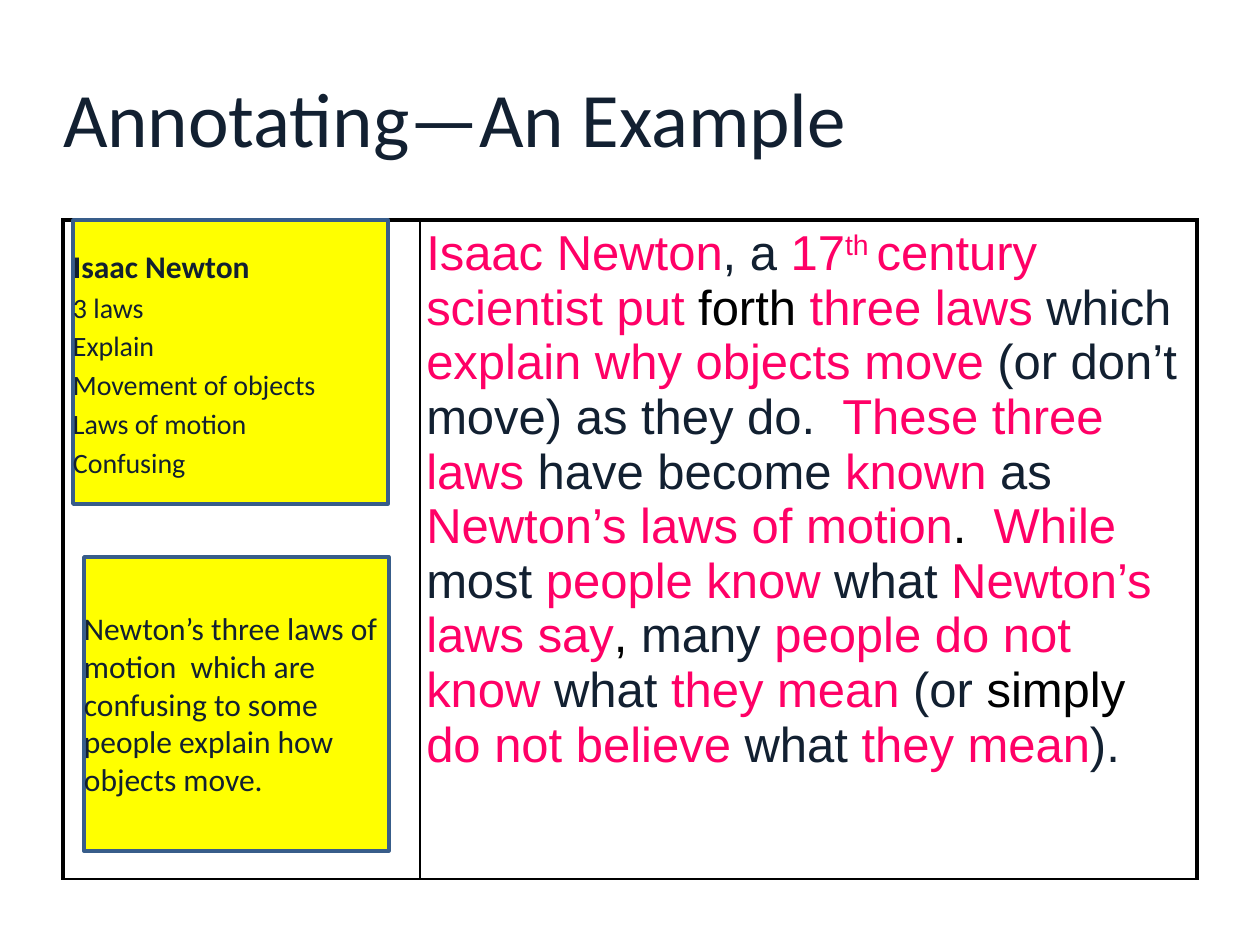
from lxml import etree
from pptx import Presentation, util as u
from pptx.dml.color import RGBColor
from pptx.enum import shapes, text
from pptx.oxml import ns

PX = 914400 // 126
PINK, NAVY, BLACK = "FF0066", "122031", "000000"

TITLE = "Annotating—An Example"
BODY = [
    (PINK, "Isaac Newton"), (NAVY, ", a "), (PINK, "17"), (PINK, "th "),
    (PINK, "century scientist put"), (BLACK, " forth "),
    (PINK, "three laws "), (NAVY, "which "),
    (PINK, "explain why objects move"),
    (NAVY, " (or don’t move) as they do.  "),
    (PINK, "These three laws "), (NAVY, "have become "),
    (PINK, "known "), (NAVY, "as "),
    (PINK, "Newton’s laws of motion"), (BLACK, ".  "),
    (PINK, "While "), (NAVY, "most "), (PINK, "people know "),
    (NAVY, "what "), (PINK, "Newton’s laws say"), (BLACK, ", "),
    (NAVY, "many "), (PINK, "people do not know "), (NAVY, "what "),
    (PINK, "they mean "), (NAVY, "(or "), (BLACK, "simply "),
    (PINK, "do not believe "), (NAVY, "what "), (PINK, "they mean"),
    (NAVY, ")."),
]
COLS, ROWS = (357, 777), (659, 72)
EDGES = {
    (0, 0): {"L": 2.25, "T": 2.25, "R": 1, "B": 1},
    (0, 1): {"L": 1, "T": 2.25, "R": 2.25, "B": 1},
    (1, 0): {"T": 1, "B": 2.25},
    (1, 1): {"T": 1, "B": 2.25},
}
NOTES = [
    ((73, 220, 315, 284), (73, 238, 315, 250), [
        ("Isaac Newton", 18, True, 4), ("3 laws", 16, False, 3),
        ("Explain", 16, False, 3), ("Movement of objects", 16, False, 3),
        ("Laws of motion", 16, False, 3), ("Confusing", 16, False, 3)]),
    ((84, 557, 305, 294), (84, 605, 305, 197), [
        ("Newton’s three laws of motion  which are confusing to some "
         "people explain how objects move.", 18, False, 4)]),
]


def hue(code):
    return RGBColor.from_string(code)


def emu(*sizes):
    return [size * PX for size in sizes]


def style(run, face, size, color, bold=False):
    font = run.font
    font.name, font.size, font.bold = face, u.Pt(size), bold
    font.color.rgb = hue(color)


def inset(frame, gap=0):
    frame.margin_left = frame.margin_right = gap
    frame.margin_top = frame.margin_bottom = gap
    frame.word_wrap = True
    frame.vertical_anchor = text.MSO_ANCHOR.MIDDLE


def border(cell, edges):
    props = cell._tc.get_or_add_tcPr()
    for side in "LRTB":
        line = etree.SubElement(props, ns.qn("a:ln" + side))
        if side in edges:
            line.set("w", str(u.Pt(edges[side])))
            fill = etree.SubElement(line, ns.qn("a:solidFill"))
            etree.SubElement(fill, ns.qn("a:srgbClr"), val=BLACK)
        else:
            etree.SubElement(line, ns.qn("a:noFill"))
    cell.fill.background()


def add_title(slide):
    title = slide.shapes.title
    title.left, title.top, title.width, title.height = emu(63, 38, 1134, 158)
    frame = title.text_frame
    frame.text = TITLE
    inset(frame)
    para = frame.paragraphs[0]
    para.alignment = text.PP_ALIGN.LEFT
    style(para.runs[0], "Calibri", 44, NAVY)


def add_grid(slide):
    box = emu(63, 220, sum(COLS), sum(ROWS))
    grid = slide.shapes.add_table(len(ROWS), len(COLS), *box).table
    grid.first_row = grid.horz_banding = False
    for col, wide in zip(grid.columns, COLS):
        col.width = wide * PX
    for row, high in zip(grid.rows, ROWS):
        row.height = high * PX
    for spot, edges in EDGES.items():
        border(grid.cell(*spot), edges)
    grid.cell(1, 0).merge(grid.cell(1, 1))
    cell = grid.cell(0, 1)
    cell.margin_left = cell.margin_right = u.Inches(0.05)
    cell.margin_top = cell.margin_bottom = u.Inches(0.05)
    para = cell.text_frame.paragraphs[0]
    para.space_before = u.Pt(6)
    for color, words in BODY:
        run = para.add_run()
        run.text = words
        style(run, "Arial", 28, color)
        if words == "th ":
            run._r.get_or_add_rPr().set("baseline", "30000")


def add_note(slide, card, area, lines):
    group = slide.shapes.add_group_shape()
    rect = group.shapes.add_shape(shapes.MSO_SHAPE.RECTANGLE, *emu(*card))
    rect.shadow.inherit = False
    rect.fill.solid()
    rect.fill.fore_color.rgb = hue("FFFF00")
    rect.line.color.rgb = hue("385D8A")
    rect.line.width = u.Pt(2)
    frame = group.shapes.add_textbox(*emu(*area)).text_frame
    inset(frame)
    frame.auto_size = text.MSO_AUTO_SIZE.SHAPE_TO_FIT_TEXT
    frame.text = "\n".join(line[0] for line in lines)
    for para, (_, size, bold, gap) in zip(frame.paragraphs, lines):
        para.space_before = u.Pt(gap)
        style(para.runs[0], "Calibri", size, NAVY, bold)


def main():
    deck = Presentation()
    deck.slide_width, deck.slide_height = u.Inches(10), u.Inches(7.5)
    slide = deck.slides.add_slide(deck.slide_layouts[5])
    add_title(slide)
    add_grid(slide)
    for note in NOTES:
        add_note(slide, *note)
    deck.save("out.pptx")


if __name__ == "__main__":
    main()
